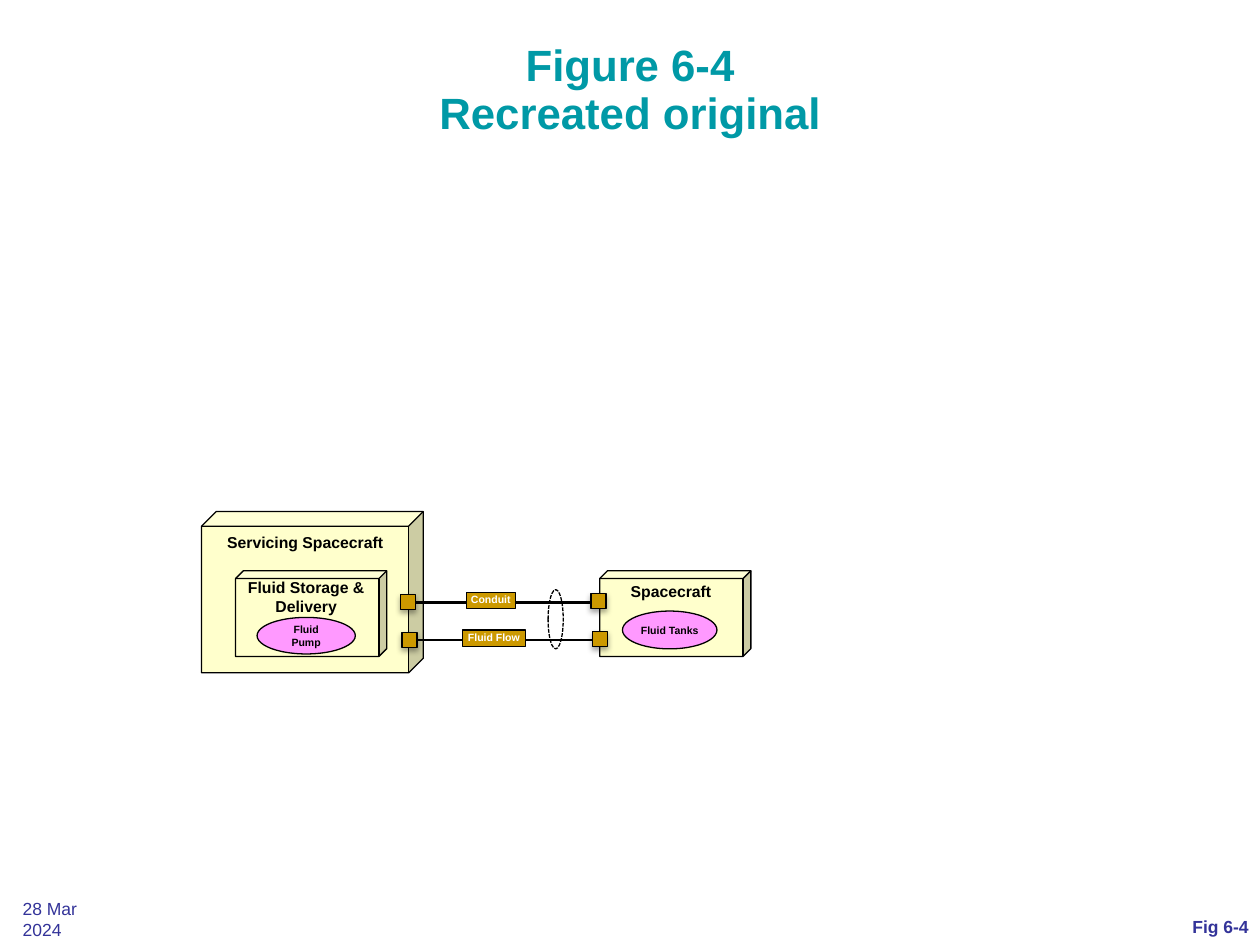
from dataclasses import dataclass
from typing import Optional

from lxml.etree import SubElement
from pptx import Presentation
from pptx.dml.color import RGBColor
from pptx.enum.dml import MSO_LINE
from pptx.enum.shapes import MSO_CONNECTOR, MSO_SHAPE
from pptx.enum.text import MSO_ANCHOR, PP_ALIGN
from pptx.oxml.ns import qn
from pptx.util import Inches, Pt

COLUMNS, ROWS = 100, 75
COLORS = {
    "title": "0099A6",
    "footer": "333399",
    "block": "FFFFCC",
    "function": "FF99FF",
    "port": "CC9900",
    "ink": "000000",
    "light": "FFFFFF",
}

presentation = Presentation()
presentation.slide_width, presentation.slide_height = Inches(10), Inches(7.5)
slide = presentation.slides.add_slide(presentation.slide_layouts[5])


@dataclass
class Area:
    column: float
    row: float
    columns: float
    rows: float

    def lengths(self) -> tuple[int, int, int, int]:
        return (across(self.column), down(self.row), across(self.columns), down(self.rows))


@dataclass
class Label:
    text: str
    size: float
    color: str = "ink"
    bold: bool = True
    align: PP_ALIGN = PP_ALIGN.CENTER
    anchor: MSO_ANCHOR = MSO_ANCHOR.TOP
    wrap: bool = True
    margins: tuple[float, float] = (0.1, 0.05)


@dataclass
class Link:
    row: float
    left_port: tuple[float, float]
    right_port: tuple[float, float]
    label_area: Area
    text: str


def across(columns: float) -> int:
    return round(presentation.slide_width * columns / COLUMNS)


def down(rows: float) -> int:
    return round(presentation.slide_height * rows / ROWS)


def rgb(name: str) -> RGBColor:
    return RGBColor.from_string(COLORS[name])


def write(shape, label: Label) -> None:
    frame = shape.text_frame
    frame.text = label.text
    frame.word_wrap = label.wrap
    frame.vertical_anchor = label.anchor
    frame.margin_left = frame.margin_right = Inches(label.margins[0])
    frame.margin_top = frame.margin_bottom = Inches(label.margins[1])
    for paragraph in frame.paragraphs:
        paragraph.alignment = label.align
        paragraph.font.name = "Arial"
        paragraph.font.size = Pt(label.size)
        paragraph.font.bold = label.bold
        paragraph.font.color.rgb = rgb(label.color)


def draw_shape(kind: MSO_SHAPE, area: Area, fill: Optional[str], label: Optional[Label] = None):
    shape = slide.shapes.add_shape(kind, *area.lengths())
    shape.shadow.inherit = False
    if fill:
        shape.fill.solid()
        shape.fill.fore_color.rgb = rgb(fill)
    else:
        shape.fill.background()
    shape.line.color.rgb = rgb("ink")
    shape.line.width = Pt(0.75)
    if label:
        write(shape, label)
    return shape


def draw_text(area: Area, label: Label) -> None:
    write(slide.shapes.add_textbox(*area.lengths()), label)


def draw_block(area: Area, label: Optional[Label] = None) -> None:
    draw_shape(MSO_SHAPE.CUBE, area, "block", label).adjustments[0] = 0.091


def draw_port(column: float, row: float) -> None:
    port = draw_shape(MSO_SHAPE.RECTANGLE, Area(column, row, 1.2, 1.2), "port")
    effects = port._element.spPr.find(qn("a:effectLst"))
    shadow = SubElement(effects, qn("a:outerShdw"), blurRad=str(Pt(3.1)),
                        dist=str(Pt(1.8)), dir="5400000", rotWithShape="0")
    color = SubElement(shadow, qn("a:srgbClr"), val=COLORS["ink"])
    SubElement(color, qn("a:alpha"), val="35000")


def draw_link(link: Link) -> None:
    connector = slide.shapes.add_connector(
        MSO_CONNECTOR.STRAIGHT, across(33), down(link.row), across(47.5), down(link.row))
    connector.line.color.rgb = rgb("ink")
    connector.line.width = Pt(1.5)
    SubElement(connector._element.spPr, qn("a:effectLst"))
    draw_port(*link.left_port)
    draw_port(*link.right_port)
    draw_shape(MSO_SHAPE.RECTANGLE, link.label_area, "port",
               Label(link.text, 6, "light", margins=(0.01, 0.01)))


def draw_title() -> None:
    title = slide.shapes.title
    title.left, title.top, title.width, title.height = Area(5, 3, 90, 12.5).lengths()
    write(title, Label("Figure 6-4\vRecreated original", 25, "title"))
    title.text_frame.paragraphs[0].line_spacing = 0.9


LINKS = [
    Link(47.8, (31.8, 47.2), (46.9, 47.1), Area(37, 47, 3.9, 1.3), "Conduit"),
    Link(50.8, (31.9, 50.2), (47, 50.1), Area(36.7, 50, 5, 1.3), "Fluid Flow"),
]


def main() -> None:
    draw_title()
    draw_block(Area(16, 40.6, 17.6, 12.8), Label("Servicing Spacecraft", 9, margins=(0, 0.05)))
    for column in (18.7, 47.6):
        draw_block(Area(column, 45.3, 12, 6.8))
    draw_text(Area(17.6, 45.4, 13.4, 4), Label("Fluid Storage & Delivery", 9))
    draw_text(Area(49, 45.7, 8.5, 2.5), Label("Spacecraft", 9, wrap=False))
    draw_shape(MSO_SHAPE.OVAL, Area(20.4, 49, 7.8, 2.9), "function",
               Label("Fluid Pump", 6, anchor=MSO_ANCHOR.MIDDLE))
    draw_shape(MSO_SHAPE.OVAL, Area(49.4, 48.5, 7.5, 3), "function",
               Label("Fluid Tanks", 6, anchor=MSO_ANCHOR.MIDDLE, wrap=False))
    for link in LINKS:
        draw_link(link)
    bundle = draw_shape(MSO_SHAPE.OVAL, Area(43.5, 46.8, 1.2, 4.7), None)
    bundle.line.dash_style = MSO_LINE.SQUARE_DOT
    draw_text(Area(81.1, 72.1, 18.9, 2.9),
              Label("Fig 6-4", 10, "footer", align=PP_ALIGN.RIGHT,
                    anchor=MSO_ANCHOR.MIDDLE, wrap=False, margins=(0.09, 0.05)))
    draw_text(Area(0.9, 71.5, 8.1, 2.8),
              Label("28 Mar 2024", 10, "footer", bold=False, align=PP_ALIGN.LEFT,
                    anchor=MSO_ANCHOR.MIDDLE, wrap=False, margins=(0.09, 0.05)))
    presentation.save("out.pptx")


if __name__ == "__main__":
    main()
